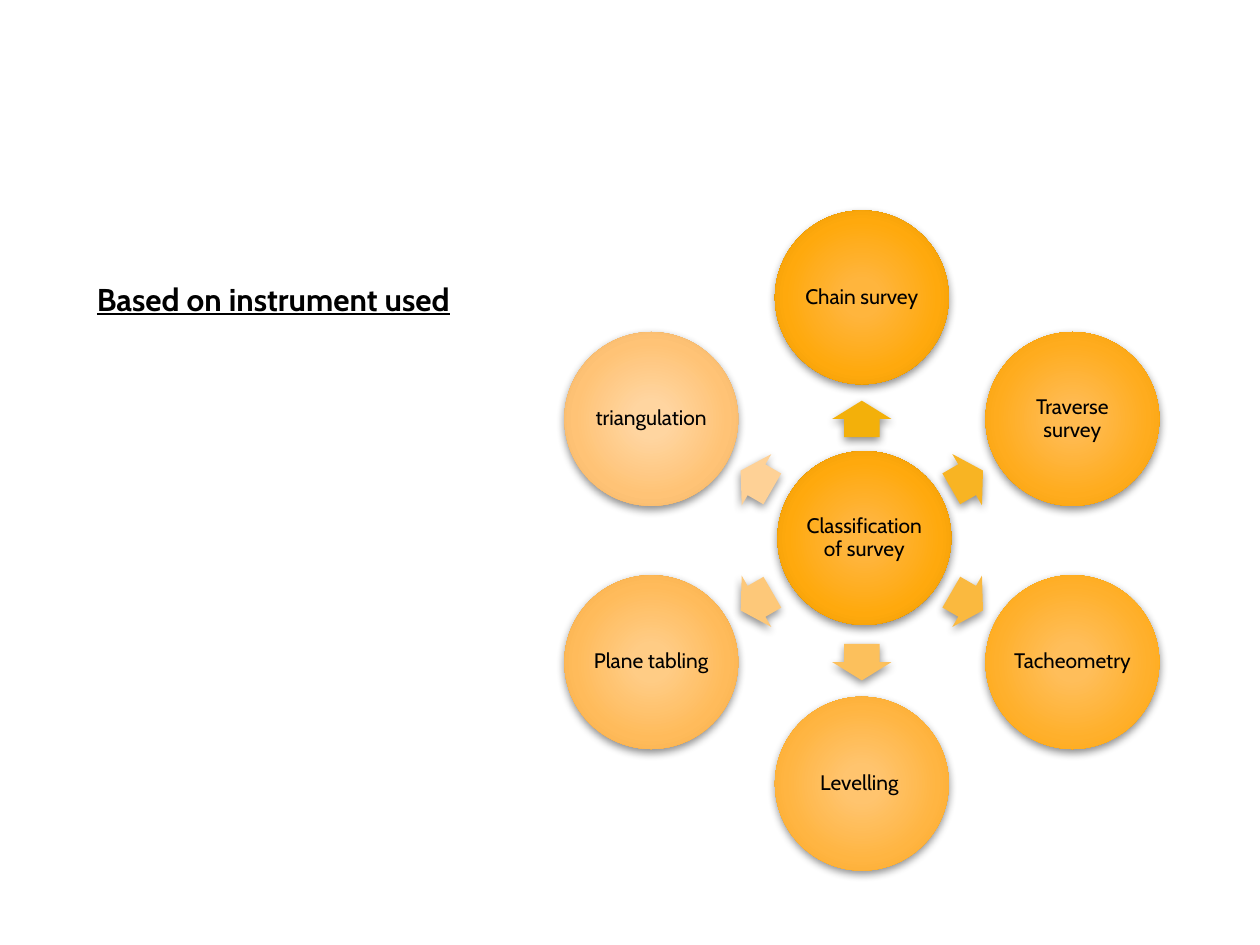
from math import cos, radians, sin

from lxml import etree
from pptx import Presentation
from pptx.dml.color import RGBColor
from pptx.enum.shapes import MSO_SHAPE
from pptx.enum.text import MSO_ANCHOR, MSO_AUTO_SIZE, PP_ALIGN
from pptx.oxml import parse_xml
from pptx.oxml.ns import qn
from pptx.util import Inches, Pt

OVAL, ARROW = MSO_SHAPE.OVAL, MSO_SHAPE.RIGHT_ARROW
MIDDLE, CENTER = MSO_ANCHOR.MIDDLE, PP_ALIGN.CENTER
NAMESPACE = "http://schemas.openxmlformats.org/drawingml/2006/main"

DIAMETER = 1.38
RING_X, RING_Y, RING_RADIUS = 6.84, 4.29, 1.93
ARROW_LENGTH, ARROW_WIDTH = 0.29, 0.47
STOPS = (0, 15, 62, 97, 100)
HUB_COLORS = "FFB53F FFB53D FFA90D E39700 C38B00"

# Label, circle gradient and arrow colour, clockwise from the top
SURVEYS = [
    ("Chain survey", HUB_COLORS, "F3B00A"),
    ("Traverse survey", "FFBA50 FFBA4F FFAC1E F49F00 DE9700", "F8B423"),
    ("Tacheometry", "FFBF5C FFBE5A FFB02C FFA506 F8A200", "FAB93F"),
    ("Levelling ", "FFC56F FFC46E FFB542 FAA721 FBA619", "FCC05C"),
    ("Plane tabling", "FFCC87 FFCC85 FFBB5B F4AA41 F3A93B", "FDC879"),
    ("triangulation", "FFD6A2 FFD5A0 FFC376 ECB062 EBAE5E", "FED196"),
]

deck = Presentation()
deck.slide_width, deck.slide_height = Inches(10), Inches(7.5)
page = deck.slides.add_slide(deck.slide_layouts[6])


def add_text(box, text, size=12, bold=False, underline=False):
    para = box.text_frame.paragraphs[0]
    span = para.add_run()
    span.text = text
    span.font.name, span.font.size = "Cabin", Pt(size)
    span.font.bold, span.font.underline = bold, underline
    span.font.color.rgb = RGBColor.from_string("000000")
    return para


def add_shadowed(kind, center_x, center_y, width, height, colors, text=None):
    """Add a borderless shape with a soft shadow; several colors make a radial fill."""
    shape = page.shapes.add_shape(
        kind, Inches(center_x - width / 2), Inches(center_y - height / 2),
        Inches(width), Inches(height))
    shape.line.fill.background()
    shape.fill.solid()
    colors = colors.split()
    shape.fill.fore_color.rgb = RGBColor.from_string(colors[0])
    properties = shape.element.spPr
    if len(colors) > 1:
        stops = "".join(
            f'<a:gs pos="{stop * 1000}"><a:srgbClr val="{color}"/></a:gs>'
            for stop, color in zip(STOPS, colors))
        properties.replace(properties.find(qn("a:solidFill")), parse_xml(
            f'<a:gradFill xmlns:a="{NAMESPACE}" rotWithShape="1"><a:gsLst>{stops}</a:gsLst>'
            '<a:path path="circle"><a:fillToRect l="50000" t="50000" r="50000" b="50000"/>'
            '</a:path></a:gradFill>'))

    shape.shadow.inherit = False
    shadow = etree.SubElement(
        properties.find(qn("a:effectLst")), qn("a:outerShdw"), blurRad=str(Pt(5)),
        dist=str(Pt(2)), dir="5400000", algn="ctr", rotWithShape="0")
    shade = etree.SubElement(shadow, qn("a:srgbClr"), val="000000")
    etree.SubElement(shade, qn("a:alpha"), val="43000")

    if text:
        frame = shape.text_frame
        frame.word_wrap, frame.vertical_anchor = True, MIDDLE
        frame.margin_left = frame.margin_right = Inches(0.02)
        frame.margin_top = frame.margin_bottom = Inches(0.02)
        para = add_text(shape, text)
        para.alignment, para.line_spacing = CENTER, 0.9
    return shape


# Hub
add_shadowed(OVAL, 6.86, 4.27, DIAMETER, DIAMETER, HUB_COLORS, "Classification of survey")

# Ring of surveys, each with an arrow halfway out from the hub
for index, (label, gradient, arrow_color) in enumerate(SURVEYS):
    angle = index * 360 / len(SURVEYS) - 90
    step_x = RING_RADIUS * cos(radians(angle))
    step_y = RING_RADIUS * sin(radians(angle))
    arrow = add_shadowed(ARROW, RING_X + step_x / 2, RING_Y + step_y / 2,
                         ARROW_LENGTH, ARROW_WIDTH, arrow_color)
    arrow.adjustments[0], arrow.adjustments[1] = 0.6, 0.5
    arrow.rotation = angle % 360
    add_shadowed(OVAL, RING_X + step_x, RING_Y + step_y, DIAMETER, DIAMETER, gradient, label)

# Heading
heading = page.shapes.add_textbox(Inches(0.67), Inches(2.17), Inches(3.33), Inches(0.4))
heading.text_frame.word_wrap = True
heading.text_frame.auto_size = MSO_AUTO_SIZE.SHAPE_TO_FIT_TEXT
add_text(heading, "Based on instrument used", size=18, bold=True, underline=True)

deck.save("out.pptx")
